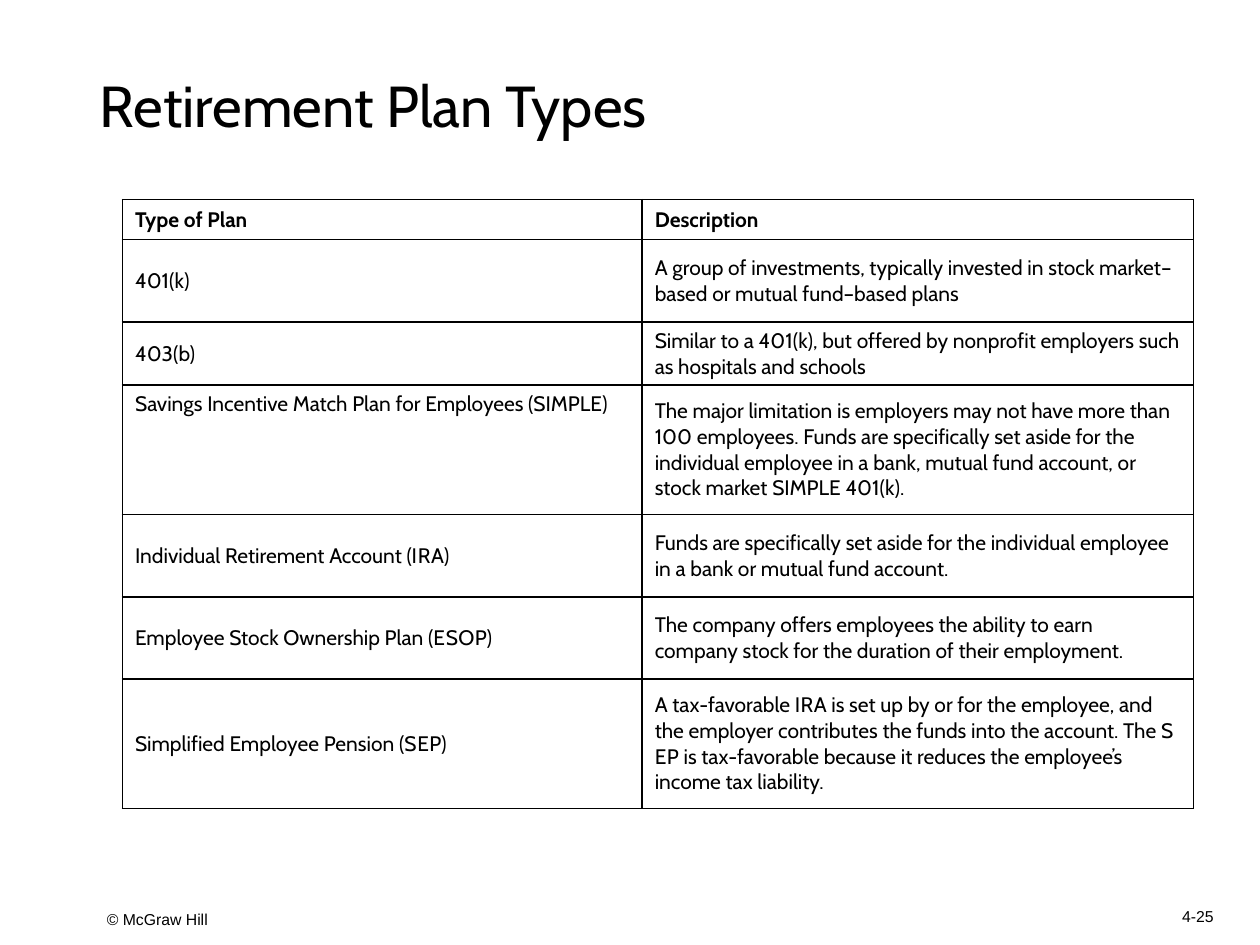
from dataclasses import dataclass
from lxml import etree
from pptx import Presentation
from pptx.dml.color import RGBColor
from pptx.enum import text as t
from pptx.oxml import ns
from pptx.util import Pt


@dataclass(frozen=True)
class Theme:
    ink: str = "000000"
    paper: str = "FFFFFF"
    main: str = "Cabin"
    plain: str = "Arial"
    title: int = 33
    body: int = 12
    foot: int = 9
    gap: int = 1
    rule: int = 1


LOOK = Theme()
MID = t.MSO_ANCHOR.MIDDLE
TOP = t.MSO_ANCHOR.TOP
GAP = "|"
COLS = (297, 315)
PLANS = [
    (23, "Type of Plan", "Description"),
    (47, "401(k)",
     "A group of investments, typically invested in stock market–based "
     "or mutual fund–based plans"),
    (33, "403(b)",
     "Similar to a 401(k), but offered by nonprofit employers such as "
     "hospitals and schools"),
    (74, "Savings Incentive Match Plan for Employees (SIMPLE)",
     "The major limitation is employers may not have more than 100 employees. "
     "Funds are specifically set aside for the individual employee in a bank, "
     "mutual fund account, or stock market SIMPLE 401(k)."),
    (47, "Individual Retirement Account (I|R|A)",
     "Funds are specifically set aside for the individual employee in a bank "
     "or mutual fund account."),
    (47, "Employee Stock Ownership Plan (E|S|O|P)",
     "The company offers employees the ability to earn company stock for the "
     "duration of their employment."),
    (74, "Simplified Employee Pension (S|E|P)",
     "A tax-favorable I|R|A is set up by or for the employee, and the employer "
     "contributes the funds into the account. The S|E|P is tax-favorable "
     "because it reduces the employee’s income tax liability."),
]


def write(frame, words, size=LOOK.body, font=LOOK.main, bold=False,
          align=t.PP_ALIGN.LEFT, lead=None):
    frame.word_wrap = True
    para = frame.paragraphs[0]
    para.alignment = align
    if lead:
        para.line_spacing = lead
    for i, part in enumerate(words.split(GAP)):
        pairs = [(part, size)]
        if i:
            pairs.insert(0, (" ", LOOK.gap))
        for piece, high in pairs:
            run = para.add_run()
            run.text = piece
            run.font.size = Pt(high)
            run.font.name = font
            run.font.bold = bold
            run.font.color.rgb = RGBColor.from_string(LOOK.ink)


def label(slide, words, area, **form):
    box = slide.shapes.add_textbox(*map(Pt, area))
    box.text_frame.vertical_anchor = MID
    write(box.text_frame, words, **form)


def edge(cell):
    props = cell._tc.get_or_add_tcPr()
    for i, side in enumerate(("lnL", "lnR", "lnT", "lnB")):
        line = etree.Element(ns.qn("a:" + side), w=str(Pt(LOOK.rule)))
        fill = etree.SubElement(line, ns.qn("a:solidFill"))
        etree.SubElement(fill, ns.qn("a:srgbClr"), val=LOOK.ink)
        props.insert(i, line)


def grid(slide, left, top):
    high = sum(row[0] for row in PLANS)
    area = map(Pt, (left, top, sum(COLS), high))
    table = slide.shapes.add_table(len(PLANS), len(COLS), *area).table
    table.horz_banding = False
    for col, wide in zip(table.columns, COLS):
        col.width = Pt(wide)
    for r, (tall, *words) in enumerate(PLANS):
        table.rows[r].height = Pt(tall)
        for c, word in enumerate(words):
            cell = table.cell(r, c)
            cell.fill.solid()
            cell.fill.fore_color.rgb = RGBColor.from_string(LOOK.paper)
            cell.vertical_anchor = TOP if "(SIMPLE)" in word else MID
            write(cell.text_frame, word, bold=r == 0)
            edge(cell)


def main():
    deck = Presentation()
    deck.slide_width, deck.slide_height = Pt(720), Pt(540)
    slide = deck.slides.add_slide(deck.slide_layouts[6])
    label(slide, "Retirement Plan Types", (50, 29, 620, 66),
          size=LOOK.title, lead=0.9)
    grid(slide, 70, 114)
    label(slide, "© McGraw Hill", (54, 514, 583, 22),
          size=LOOK.foot, font=LOOK.plain)
    label(slide, "4-25", (654.5, 510, 60, 27), size=LOOK.foot,
          font=LOOK.plain, align=t.PP_ALIGN.CENTER)
    deck.save("out.pptx")


if __name__ == "__main__":
    main()
